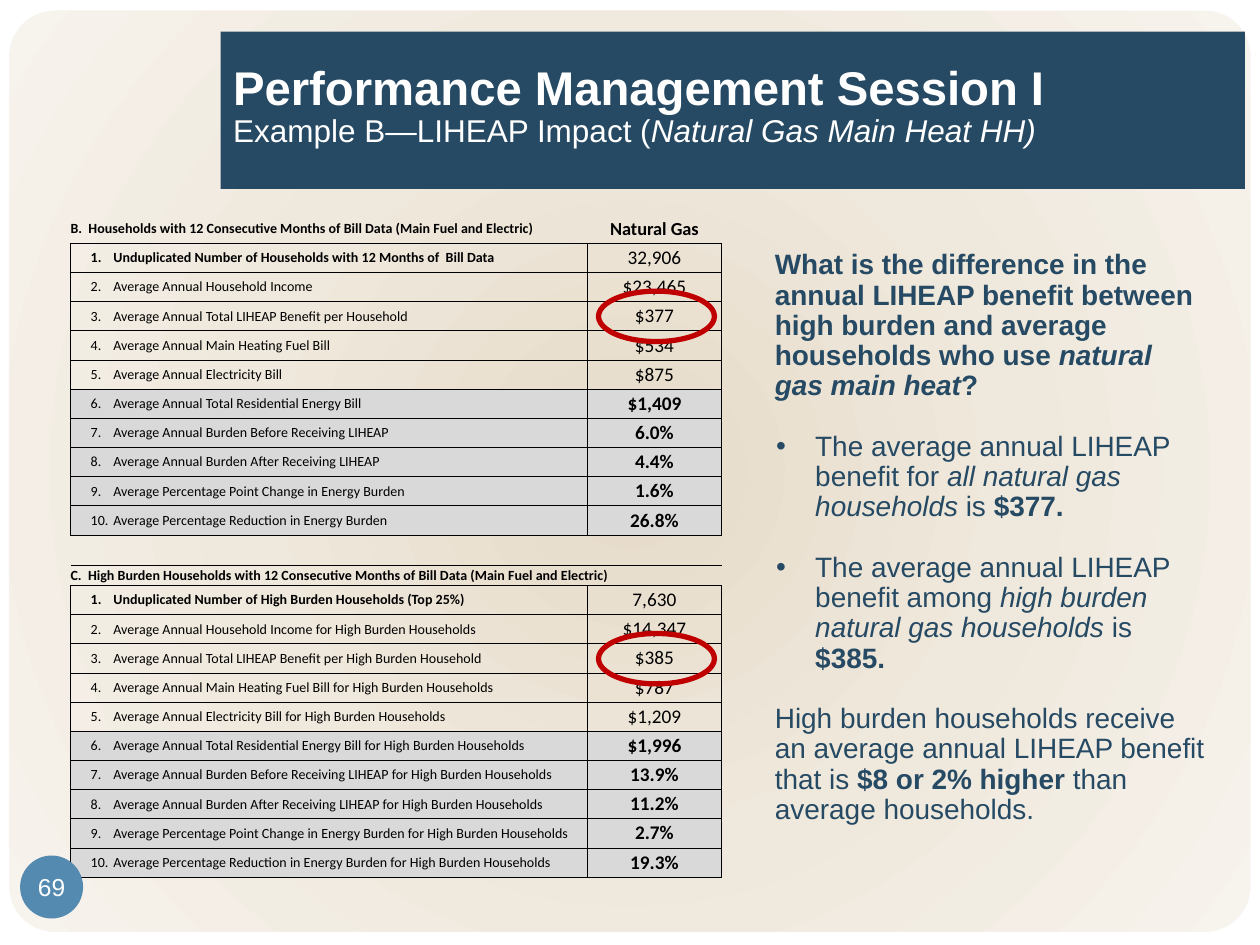
"""Build the slide on LIHEAP impact for natural gas main heat households."""
from lxml import etree
from pptx import Presentation
from pptx.dml.color import RGBColor
from pptx.enum import shapes, text
from pptx import util as u
from pptx.oxml.ns import qn

NAVY, RED, BLACK, WHITE, GRAY = "264A64", "C00000", "000000", "FFFFFF", "D9D9D9"
NO_STYLE = "{2D5ABB26-0587-4C30-8999-92F81FD0307C}"
ROW, GAP, HEAD = 0.2317, 0.24, 0.16
COLS = (4.1, 1.07)
LEFT, TOP = 0.56, 1.7
SHADED = 6
RING_ROW = 3

TITLE = [("Performance Management Session I", dict(size=27, bold=True)),
         ("Example B—LIHEAP Impact (", dict(size=18)),
         ("Natural Gas Main Heat HH)", dict(size=18, italic=True))]

TAIL = " for High Burden Households"
COMMON = ["Average Annual Main Heating Fuel Bill",
          "Average Annual Electricity Bill",
          "Average Annual Total Residential Energy Bill",
          "Average Annual Burden Before Receiving LIHEAP",
          "Average Annual Burden After Receiving LIHEAP",
          "Average Percentage Point Change in Energy Burden",
          "Average Percentage Reduction in Energy Burden"]
GROUPS = [
    ("B.  Households with 12 Consecutive Months of Bill Data (Main Fuel and Electric)",
     ["Unduplicated Number of Households with 12 Months of  Bill Data",
      "Average Annual Household Income",
      "Average Annual Total LIHEAP Benefit per Household"] + COMMON,
     ["32,906", "$23,465", "$377", "$534", "$875",
      "$1,409", "6.0%", "4.4%", "1.6%", "26.8%"]),
    ("C.  High Burden Households with 12 Consecutive Months of Bill Data (Main Fuel and Electric)",
     ["Unduplicated Number of High Burden Households (Top 25%)",
      "Average Annual Household Income" + TAIL,
      "Average Annual Total LIHEAP Benefit per High Burden Household"]
     + [name + TAIL for name in COMMON],
     ["7,630", "$14,347", "$385", "$787", "$1,209",
      "$1,996", "13.9%", "11.2%", "2.7%", "19.3%"]),
]

B, I = dict(bold=True), dict(italic=True)
NOTES = [
    (False, [("What is the difference in the annual LIHEAP benefit between high burden "
              "and average households who use ", B),
             ("natural gas main heat", dict(bold=True, italic=True)), ("?", B)]),
    (True, [("The average annual LIHEAP benefit for ", {}),
            ("all natural gas households", I), (" is ", {}), ("$377.", B)]),
    (True, [("The average annual LIHEAP benefit among ", {}),
            ("high burden natural gas households ", I), ("is ", {}), ("$385.", B)]),
    (False, [("High burden households receive an average annual LIHEAP benefit that is ", {}),
             ("$8 or 2% higher", B), (" than average households.", {})]),
]


def color(code):
    return RGBColor.from_string(code)


def write(para, words, size=16, font="Arial", ink=NAVY, bold=False, italic=False):
    run = para.add_run()
    run.text = words
    face = run.font
    face.size, face.name, face.bold, face.italic = u.Pt(size), font, bold, italic
    face.color.rgb = color(ink)


def place(item, *box):
    item.left, item.top, item.width, item.height = (u.Inches(n) for n in box)


def draw(slide, kind, box, fill=None, line=None, width=1):
    item = slide.shapes.add_shape(kind, *(u.Inches(n) for n in box))
    item.shadow.inherit = False
    if fill:
        item.fill.solid()
        item.fill.fore_color.rgb = color(fill)
    else:
        item.fill.background()
    if line:
        item.line.color.rgb = color(line)
        item.line.width = u.Pt(width)
    else:
        item.line.fill.background()
    return item


def glow(item, stops):
    """Give the shape a round gradient from its centre outward."""
    old = item._element.spPr.find(qn("a:solidFill"))
    grad = etree.Element(qn("a:gradFill"), rotWithShape="1")
    row = etree.SubElement(grad, qn("a:gsLst"))
    for pos, code in stops:
        stop = etree.SubElement(row, qn("a:gs"), pos=str(pos * 1000))
        etree.SubElement(stop, qn("a:srgbClr"), val=code)
    way = etree.SubElement(grad, qn("a:path"), path="circle")
    etree.SubElement(way, qn("a:fillToRect"), l="50000", t="50000", r="50000", b="50000")
    old.getparent().replace(old, grad)


def indent(para, left, first, bullet=None):
    props = para._p.get_or_add_pPr()
    props.set("marL", str(u.Inches(left)))
    props.set("indent", str(u.Inches(first)))
    if bullet:
        etree.SubElement(props, qn("a:buFont"), typeface="Arial")
        etree.SubElement(props, qn("a:buChar"), char=bullet)
    else:
        etree.SubElement(props, qn("a:buNone"))


def border(cell, sides):
    props = cell._tc.get_or_add_tcPr()
    for spot, side in enumerate(sides):
        edge = etree.Element(qn("a:ln" + side), w=str(u.Pt(0.5)))
        paint = etree.SubElement(edge, qn("a:solidFill"))
        etree.SubElement(paint, qn("a:srgbClr"), val=BLACK)
        props.insert(spot, edge)


def fill_cell(cell, words="", center=False, shade=False, sides="", **style):
    cell.margin_left = cell.margin_right = cell.margin_top = cell.margin_bottom = 0
    cell.vertical_anchor = text.MSO_ANCHOR.MIDDLE
    para = cell.text_frame.paragraphs[0]
    if center:
        para.alignment = text.PP_ALIGN.CENTER
    if words:
        write(para, words, font="Calibri", ink=BLACK, **style)
    else:
        etree.SubElement(para._p, qn("a:endParaRPr"), sz="800")
    if shade:
        cell.fill.solid()
        cell.fill.fore_color.rgb = color(GRAY)
    else:
        cell.fill.background()
    border(cell, sides)
    return para


def add_grid(slide):
    rows = [ROW] * 11 + [GAP, HEAD] + [ROW] * 10
    frame = slide.shapes.add_table(len(rows), 2, *(
        u.Inches(n) for n in (LEFT, TOP, sum(COLS), sum(rows))))
    grid = frame.table
    grid.first_row = grid.horz_banding = False
    grid._tbl.tblPr.find(qn("a:tableStyleId")).text = NO_STYLE
    for col, wide in zip(grid.columns, COLS):
        col.width = u.Inches(wide)
    for row, high in zip(grid.rows, rows):
        row.height = u.Inches(high)
    fill_cell(grid.cell(0, 1), "Natural Gas", center=True, size=10.5, bold=True, sides="B")
    for col in range(2):
        fill_cell(grid.cell(11, col), sides="T")
    fill_cell(grid.cell(12, 1), sides="B")
    grid.cell(12, 0).merge(grid.cell(12, 1))
    for start, (head, names, values) in zip((0, 12), GROUPS):
        fill_cell(grid.cell(start, 0), head, size=8, bold=True, sides="B")
        for num, (name, value) in enumerate(zip(names, values), 1):
            look = dict(shade=num >= SHADED, sides="LRTB")
            para = fill_cell(grid.cell(start + num, 0), f"{num}.\t{name}",
                             size=8, bold=num == 1, **look)
            indent(para, 0.34, -0.18)
            fill_cell(grid.cell(start + num, 1), value, center=True,
                      size=11, bold=num >= SHADED, **look)
        mid = TOP + sum(rows[:start + RING_ROW]) + ROW / 2
        draw(slide, shapes.MSO_SHAPE.OVAL, (4.75, mid - 0.2, 0.92, 0.4), line=RED, width=3)


def add_title(slide):
    head = slide.shapes.title
    place(head, 1.75, 0.25, 8.13, 1.25)
    head.fill.solid()
    head.fill.fore_color.rgb = color(NAVY)
    frame = head.text_frame
    frame.auto_size = text.MSO_AUTO_SIZE.NONE
    frame.vertical_anchor = text.MSO_ANCHOR.MIDDLE
    frame.margin_top, frame.margin_bottom = u.Inches(0.05), u.Inches(0.1)
    para = frame.paragraphs[0]
    para.alignment, para.line_spacing = text.PP_ALIGN.LEFT, 0.9
    for spot, (words, style) in enumerate(TITLE):
        if spot == 1:
            para.add_line_break()
        write(para, words, ink=WHITE, **style)


def add_notes(slide):
    body = slide.placeholders[1]
    place(body, 5.93, 1.94, 3.75, 4.98)
    frame = body.text_frame
    frame.auto_size = text.MSO_AUTO_SIZE.NONE
    for spot, (listed, runs) in enumerate(NOTES):
        para = frame.add_paragraph() if spot else frame.paragraphs[0]
        para.line_spacing, para.space_before = 0.9, u.Pt(17.4 if spot else 0)
        indent(para, *((0.44, -0.31, "•") if listed else (0.12, 0)))
        for words, style in runs:
            write(para, words, **style)


def main():
    deck = Presentation()
    deck.slide_width, deck.slide_height = u.Inches(10), u.Inches(7.5)
    slide = deck.slides.add_slide(deck.slide_layouts[1])
    slide.background.fill.solid()
    slide.background.fill.fore_color.rgb = color(WHITE)
    panel = draw(slide, shapes.MSO_SHAPE.ROUNDED_RECTANGLE, (0.07, 0.08, 9.86, 7.32),
                 fill=WHITE, line=WHITE, width=0.5)
    panel.adjustments[0] = 0.05
    glow(panel, [(0, "E6DBC9"), (50, "EFE8DC"), (100, "F7F3ED")])
    slide.shapes._spTree.insert(2, panel._element)
    add_title(slide)
    add_notes(slide)
    add_grid(slide)
    badge = draw(slide, shapes.MSO_SHAPE.OVAL, (0.16, 6.79, 0.5, 0.5), fill="548AB0")
    frame = badge.text_frame
    frame.margin_left = frame.margin_right = frame.margin_top = frame.margin_bottom = 0
    frame.word_wrap = False
    write(frame.paragraphs[0], "69", size=14, ink=WHITE)
    deck.save("out.pptx")


if __name__ == "__main__":
    main()
